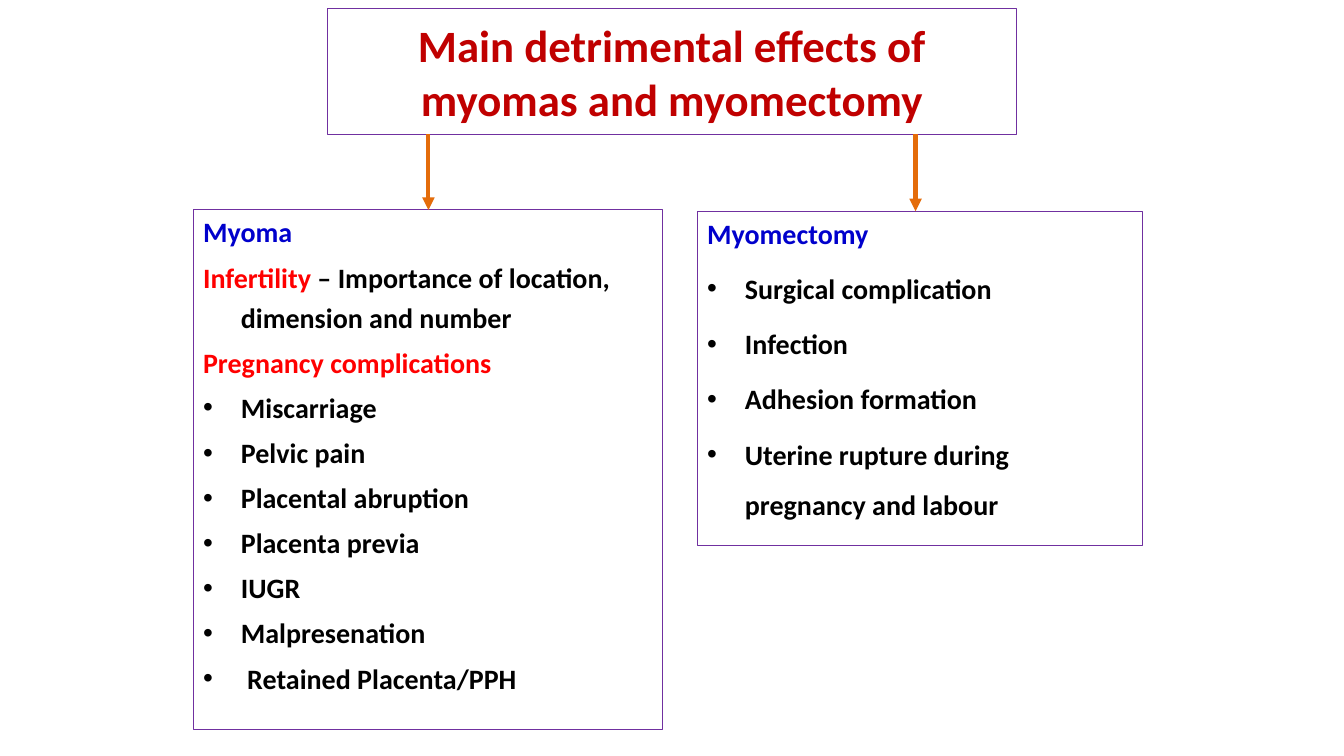
import pptx
import pptx.dml.color
import pptx.enum.shapes
import pptx.enum.text
import pptx.oxml
import pptx.oxml.ns
import pptx.util

COLORS = {
    "title": "C00000",
    "heading": "0000CC",
    "emphasis": "FF0000",
    "text": "000000",
    "border": "7030A0",
    "arrow": "E46C0A",
    "background": "FFFFFF",
}
TITLE_BOTTOM = 96


def rgb(name):
    return pptx.dml.color.RGBColor.from_string(COLORS[name])


def add_xml(parent, tag, **attributes):
    element = pptx.oxml.parse_xml(f'<a:{tag} {pptx.oxml.ns.nsdecls("a")}/>')
    for name, value in attributes.items():
        element.set(name, value)
    parent.append(element)


class SlideBuilder:
    font_name = "Calibri"
    title_size = 32
    body_size = 20
    hanging_indent = 27
    space_before = 3.4

    def __init__(self, slide):
        self.slide = slide

    def format_run(self, run, size, color):
        run.font.name = self.font_name
        run.font.size = pptx.util.Pt(size)
        run.font.bold = True
        run.font.color.rgb = rgb(color)

    def format_frame(self, shape, anchor):
        shape.line.color.rgb = rgb("border")
        shape.line.width = pptx.util.Pt(0.75)
        frame = shape.text_frame
        frame.word_wrap = True
        frame.auto_size = pptx.enum.text.MSO_AUTO_SIZE.NONE
        frame.vertical_anchor = anchor

    def title(self, text, left, top, width, height):
        shape = self.slide.shapes.title
        shape.left, shape.top = pptx.util.Pt(left), pptx.util.Pt(top)
        shape.width, shape.height = pptx.util.Pt(width), pptx.util.Pt(height)
        self.format_frame(shape, pptx.enum.text.MSO_ANCHOR.MIDDLE)
        shape.text_frame.text = text
        paragraph = shape.text_frame.paragraphs[0]
        paragraph.alignment = pptx.enum.text.PP_ALIGN.CENTER
        self.format_run(paragraph.runs[0], self.title_size, "title")

    def box(self, lines, line_spacing, left, top, width, height):
        """Each line is a bullet flag followed by its (text, color) runs."""
        shape = self.slide.shapes.add_textbox(
            *map(pptx.util.Pt, (left, top, width, height)))
        self.format_frame(shape, pptx.enum.text.MSO_ANCHOR.TOP)
        frame = shape.text_frame
        for index, (bulleted, runs) in enumerate(lines):
            paragraph = frame.add_paragraph() if index else frame.paragraphs[0]
            if index:
                paragraph.line_spacing = line_spacing
                paragraph.space_before = pptx.util.Pt(self.space_before)
            properties = paragraph._p.get_or_add_pPr()
            indent = pptx.util.Pt(self.hanging_indent)
            properties.set("marL", str(indent))
            properties.set("indent", str(-indent))
            if bulleted:
                add_xml(properties, "buFont", typeface="Arial")
                add_xml(properties, "buChar", char="•")
            else:
                add_xml(properties, "buNone")
            for text, color in runs:
                run = paragraph.add_run()
                run.text = text
                self.format_run(run, self.body_size, color)

    def down_arrow(self, x, top, bottom):
        connector = self.slide.shapes.add_connector(
            pptx.enum.shapes.MSO_CONNECTOR.STRAIGHT,
            *map(pptx.util.Pt, (x, top, x, bottom)))
        connector.line.color.rgb = rgb("arrow")
        connector.line.width = pptx.util.Pt(3)
        add_xml(connector.line._get_or_add_ln(), "tailEnd", type="triangle")
        add_xml(connector._element.spPr, "effectLst")


def bullets(*texts):
    return [(True, [(text, "text")]) for text in texts]


def main():
    presentation = pptx.Presentation()
    presentation.slide_width = pptx.util.Pt(960)
    presentation.slide_height = pptx.util.Pt(540)
    slide = presentation.slides.add_slide(presentation.slide_layouts[5])
    slide.background.fill.solid()
    slide.background.fill.fore_color.rgb = rgb("background")
    builder = SlideBuilder(slide)

    # Title
    builder.title("Main detrimental effects of myomas and myomectomy",
                  234, 6, 492, TITLE_BOTTOM - 6)

    # Effects of myomas
    myoma_lines = [
        (False, [("Myoma", "heading")]),
        (False, [("Infertility", "emphasis"),
                 (" – Importance of location, dimension and number", "text")]),
        (False, [("Pregnancy complications", "emphasis")]),
    ] + bullets("Miscarriage", "Pelvic pain", "Placental abruption",
                "Placenta previa", "IUGR", "Malpresenation",
                " Retained Placenta/PPH")
    builder.box(myoma_lines, 1.2, 138, 150, 335.5, 371)

    # Effects of myomectomy
    myomectomy_lines = [(False, [("Myomectomy", "heading")])] + bullets(
        "Surgical complication", "Infection", "Adhesion formation",
        "Uterine rupture during pregnancy and labour")
    builder.box(myomectomy_lines, 1.5, 498, 151, 318, 239)

    # Arrows from the title to each box
    for x, box_top in ((654, 151), (306, 150)):
        builder.down_arrow(x, TITLE_BOTTOM, box_top)

    presentation.save("out.pptx")


if __name__ == "__main__":
    main()
